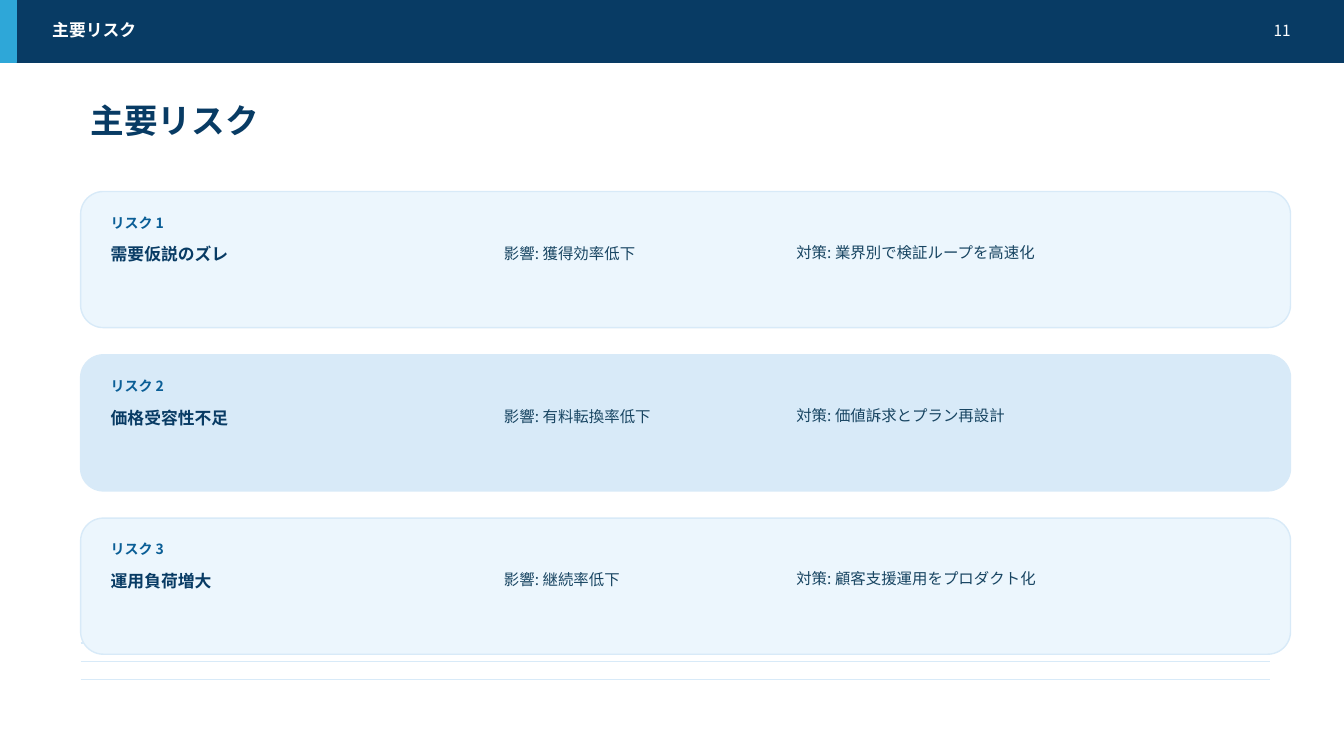
from lxml import etree
from pptx import Presentation
from pptx.dml.color import RGBColor
from pptx.enum import shapes, text
from pptx.oxml import ns
from pptx.util import Inches, Pt

HEADING = "主要リスク"
PAGE = "11"
RISKS = [
    ("需要仮説のズレ", "獲得効率低下", "業界別で検証ループを高速化"),
    ("価格受容性不足", "有料転換率低下", "価値訴求とプラン再設計"),
    ("運用負荷増大", "継続率低下", "顧客支援運用をプロダクト化"),
]
COLORS = {
    "navy": "083B64", "cyan": "2EA7D8", "white": "FFFFFF", "pale": "ECF6FD",
    "sky": "D8EAF8", "blue": "0A5E96", "slate": "184562",
}
JP = "Noto Sans CJK JP"
MIDDLE, TOP = text.MSO_ANCHOR.MIDDLE, text.MSO_ANCHOR.TOP
LEFT, RIGHT = text.PP_ALIGN.LEFT, text.PP_ALIGN.RIGHT
STYLES = {
    "title": dict(size=Pt(24), bold=True, name="Lato", color="navy"),
    "header": dict(size=Pt(12), bold=True, name=JP, color="white"),
    "page": dict(size=Pt(11), bold=False, name=JP, color="white"),
    "label": dict(size=Pt(10), bold=True, name=JP, color="blue"),
    "risk": dict(size=Pt(12), bold=True, name=JP, color="navy"),
    "detail": dict(size=Pt(11), bold=False, name=JP, color="slate"),
}
CARD_TOP, CARD_STEP = 1.9, 1.62
RULE_TOP, RULE_STEP, RULE_COUNT = 6.38, 0.18, 3


def rgb(name):
    return RGBColor.from_string(COLORS[name])


def write(sp, content, style, align=LEFT, anchor=MIDDLE):
    tf = sp.text_frame
    tf.word_wrap = True
    tf.auto_size = text.MSO_AUTO_SIZE.NONE
    tf.vertical_anchor = anchor
    p = tf.paragraphs[0]
    p.alignment = align
    r = p.add_run()
    r.text = content
    for key, value in STYLES[style].items():
        if key == "color":
            r.font.color.rgb = rgb(value)
        else:
            setattr(r.font, key, value)
    # East Asian glyphs take their own typeface setting
    etree.SubElement(r.font._element, ns.qn("a:ea"), typeface=JP)


def add_text(slide, box, content, style, **layout):
    sp = slide.shapes.add_textbox(*map(Inches, box))
    write(sp, content, style, **layout)


def add_block(slide, kind, box, fill, line):
    sp = slide.shapes.add_shape(kind, *map(Inches, box))
    sp.shadow.inherit = False
    sp.fill.solid()
    sp.fill.fore_color.rgb = rgb(fill)
    sp.line.color.rgb = rgb(line)
    sp.line.width = Pt(1)


def add_rule(slide, y):
    """Draw a thin horizontal line across the foot of the slide."""
    ends = map(Inches, (0.8, y, 12.6, y))
    line = slide.shapes.add_connector(shapes.MSO_CONNECTOR.STRAIGHT, *ends)
    line.line.color.rgb = rgb("sky")
    line.line.width = Pt(1)
    etree.SubElement(line._element.spPr, ns.qn("a:effectLst"))


def add_risk(slide, index, risk, impact, action):
    y = CARD_TOP + index * CARD_STEP
    row = y + 0.46
    add_block(slide, shapes.MSO_SHAPE.ROUNDED_RECTANGLE, (0.8, y, 12, 1.35),
              "sky" if index % 2 else "pale", "sky")
    add_text(slide, (1, y + 0.2, 1.2, 0.22), f"リスク {index + 1}", "label")
    add_text(slide, (1, row, 3.7, 0.32), risk, "risk")
    add_text(slide, (4.9, row, 2.8, 0.3), f"影響: {impact}", "detail")
    add_text(slide, (7.8, row, 4.8, 0.58), f"対策: {action}", "detail", anchor=TOP)


def main():
    prs = Presentation()
    prs.slide_width, prs.slide_height = Inches(13.33), Inches(7.5)
    slide = prs.slides.add_slide(prs.slide_layouts[5])

    title = slide.shapes.title
    title.left, title.top, title.width, title.height = map(
        Inches, (0.8, 0.95, 11.4, 0.48))
    write(title, HEADING, "title")

    for i in range(RULE_COUNT):
        add_rule(slide, RULE_TOP + i * RULE_STEP)

    for width, color in ((13.33, "navy"), (0.16, "cyan")):
        add_block(slide, shapes.MSO_SHAPE.RECTANGLE, (0, 0, width, 0.62), color, color)
    add_text(slide, (0.42, 0.17, 8.8, 0.26), HEADING, "header")
    add_text(slide, (12.15, 0.17, 0.75, 0.26), PAGE, "page", align=RIGHT)

    for i, risk in enumerate(RISKS):
        add_risk(slide, i, *risk)

    prs.save("out.pptx")


if __name__ == "__main__":
    main()
